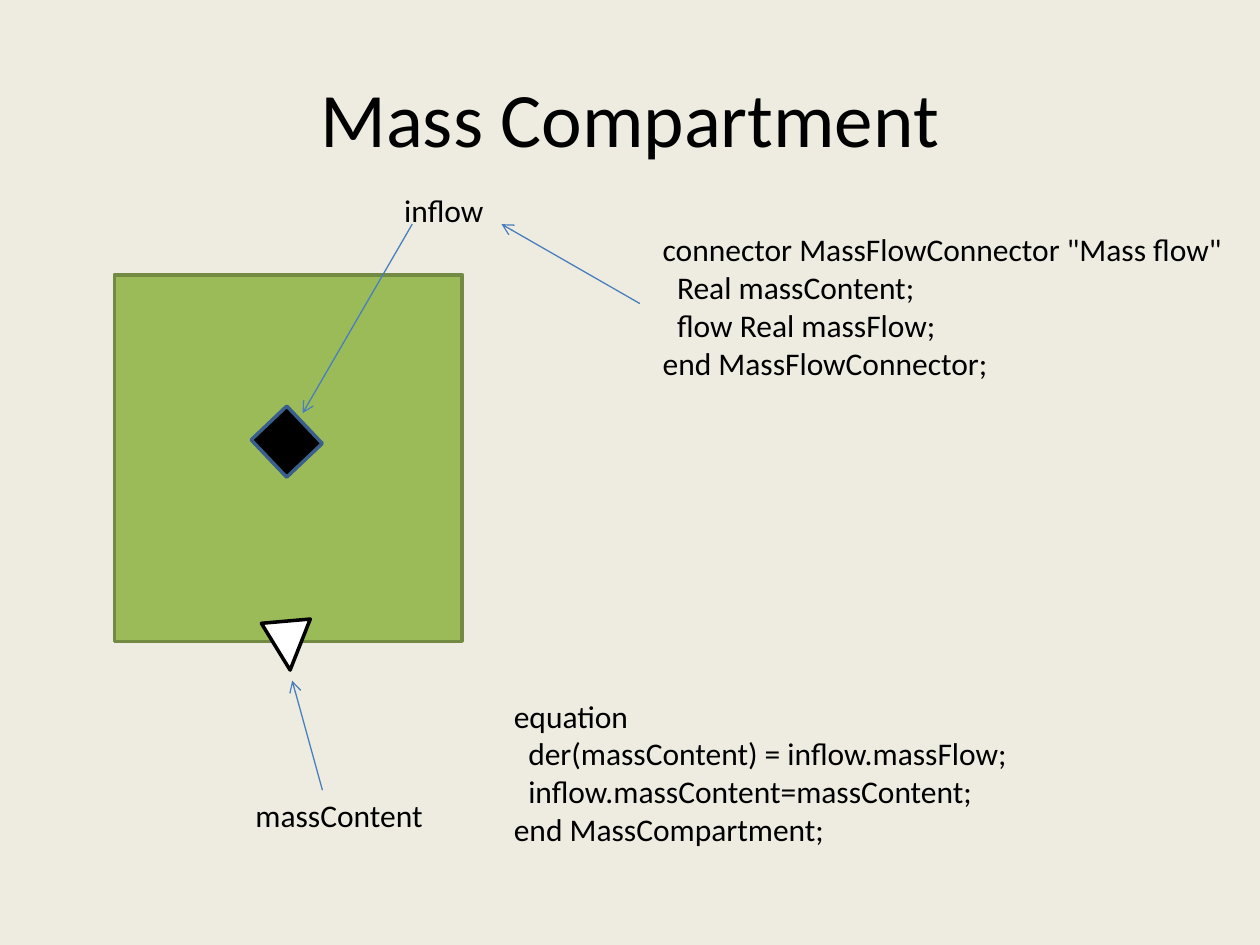
from lxml import etree
from pptx import Presentation
from pptx.dml.color import RGBColor
from pptx.enum.shapes import MSO_CONNECTOR, MSO_SHAPE
from pptx.enum.text import MSO_ANCHOR, MSO_AUTO_SIZE, PP_ALIGN
from pptx.oxml.ns import qn
from pptx.util import Cm, Pt

RECTANGLE = MSO_SHAPE.RECTANGLE
TRIANGLE = MSO_SHAPE.ISOSCELES_TRIANGLE
STRAIGHT = MSO_CONNECTOR.STRAIGHT
FONT = "Calibri"
CODE_INDENT = Cm(0.29)
COLORS = {
    "background": "EEECE1",
    "black": "000000",
    "white": "FFFFFF",
    "green": "9BBB59",
    "dark green": "738A42",
    "dark blue": "3A5F8C",
    "arrow": "4B7EBC",
}


def color(name):
    return RGBColor.from_string(COLORS[name])


def add_run(paragraph, text, size):
    run = paragraph.add_run()
    run.text = text
    run.font.name = FONT
    run.font.size = Pt(size)
    run.font.color.rgb = color("black")


presentation = Presentation()
presentation.slide_width = Cm(25.4)
presentation.slide_height = Cm(19.05)
slide = presentation.slides.add_slide(presentation.slide_layouts[5])
slide.background.fill.solid()
slide.background.fill.fore_color.rgb = color("background")

# Title
title = slide.shapes.title
title.left, title.top, title.width, title.height = Cm(1.27), Cm(0.76), Cm(22.86), Cm(3.18)
title.text_frame.vertical_anchor = MSO_ANCHOR.MIDDLE
title_paragraph = title.text_frame.paragraphs[0]
title_paragraph.alignment = PP_ALIGN.CENTER
add_run(title_paragraph, "Mass Compartment", 44)

# Compartment with its inflow connector and mass content output
symbols = [
    (RECTANGLE, 2.31, 5.54, 7.01, 7.39, 0, "green", "dark green"),
    (RECTANGLE, 5.26, 8.41, 1.04, 0.99, 46.5, "black", "dark blue"),
    (TRIANGLE, 5.31, 12.52, 0.99, 0.99, 175, "white", "black"),
]
for kind, left, top, width, height, rotation, fill, line in symbols:
    shape = slide.shapes.add_shape(kind, Cm(left), Cm(top), Cm(width), Cm(height))
    shape.rotation = rotation
    shape.shadow.inherit = False
    shape.fill.solid()
    shape.fill.fore_color.rgb = color(fill)
    shape.line.color.rgb = color(line)
    shape.line.width = Pt(2)

# Arrows from the labels and code to the parts they explain
arrows = [
    (8.31, 4.52, 6.1, 8.33),
    (6.5, 15.93, 5.89, 13.72),
    (12.9, 6.12, 10.11, 4.52),
]
for ends in arrows:
    arrow = slide.shapes.add_connector(STRAIGHT, *[Cm(value) for value in ends])
    arrow.line.color.rgb = color("arrow")
    arrow.line.width = Pt(0.75)
    etree.SubElement(arrow.line._get_or_add_ln(), qn("a:tailEnd"), type="arrow")
    etree.SubElement(arrow._element.spPr, qn("a:effectLst"))

# Code blocks and labels: position, wrapping, (indent level, text) lines
texts = [
    (13.11, 4.52, 12.7, 3.33, True, [
        (0, 'connector MassFlowConnector "Mass flow"'),
        (1, "Real massContent;"),
        (1, "flow Real massFlow;"),
        (0, "end MassFlowConnector;"),
    ]),
    (10.11, 13.92, 15.29, 3.33, True, [
        (0, "equation"),
        (1, "der(massContent) = inflow.massFlow;"),
        (1, "inflow.massContent=massContent;"),
        (0, "end MassCompartment;"),
    ]),
    (4.9, 15.93, 3.91, 1.02, False, [(0, "massContent")]),
    (7.9, 3.73, 2.13, 1.02, False, [(0, "inflow")]),
]
for left, top, width, height, wrap, lines in texts:
    box = slide.shapes.add_textbox(Cm(left), Cm(top), Cm(width), Cm(height))
    frame = box.text_frame
    frame.word_wrap = wrap
    frame.auto_size = MSO_AUTO_SIZE.SHAPE_TO_FIT_TEXT
    for index, (level, text) in enumerate(lines):
        paragraph = frame.add_paragraph() if index else frame.paragraphs[0]
        if level:
            paragraph._p.get_or_add_pPr().set("marL", str(level * CODE_INDENT))
        add_run(paragraph, text, 18)

presentation.save("out.pptx")
